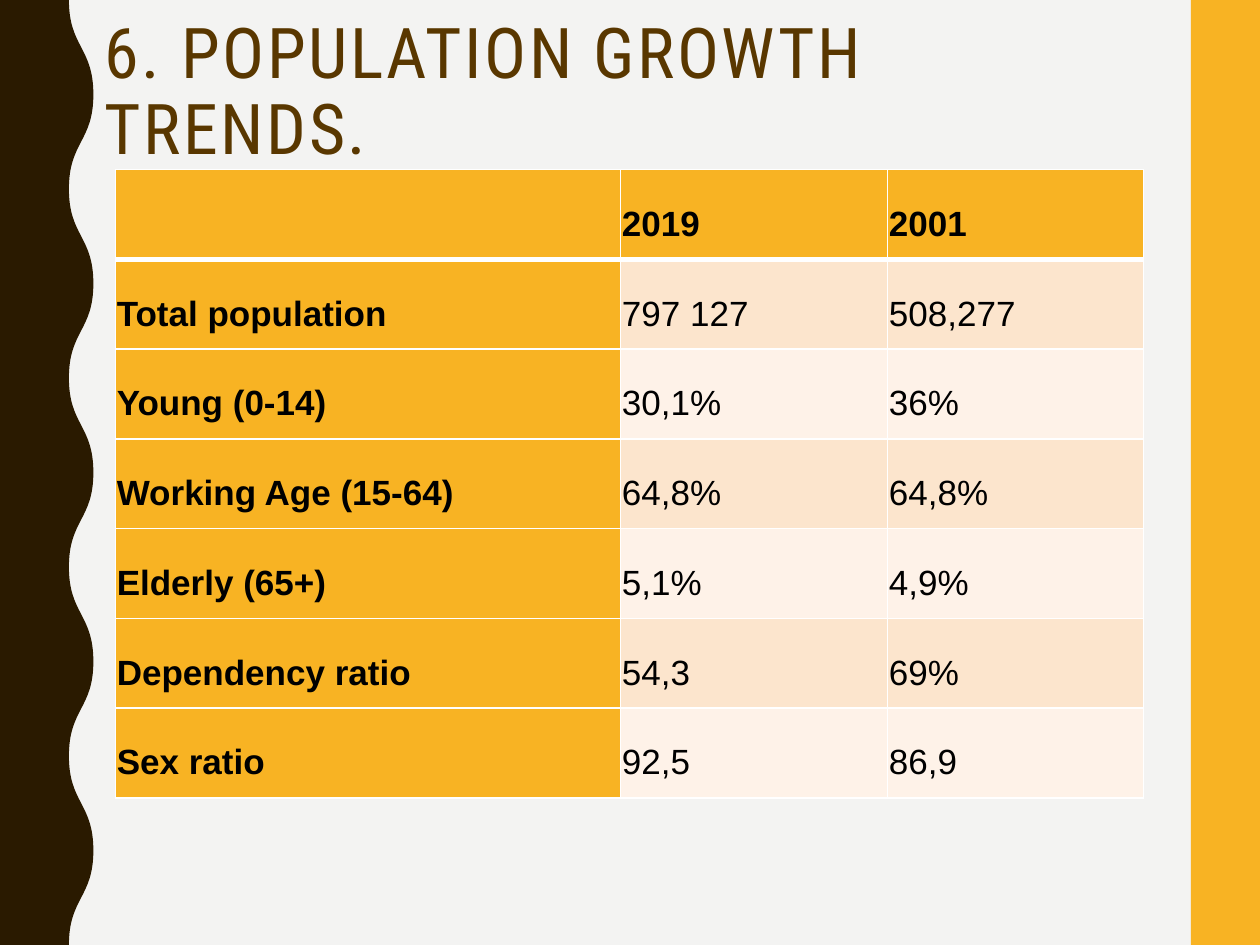
from lxml import etree
from pptx import Presentation
from pptx.dml.color import RGBColor
from pptx.enum.shapes import MSO_SHAPE
from pptx.enum.text import MSO_ANCHOR, MSO_AUTO_SIZE, PP_ALIGN
from pptx.oxml.ns import qn
from pptx.util import Pt

RECT = MSO_SHAPE.RECTANGLE
TOP, MIDDLE = MSO_ANCHOR.TOP, MSO_ANCHOR.MIDDLE
LEFT, JUSTIFY = PP_ALIGN.LEFT, PP_ALIGN.JUSTIFY
NO_FIT = MSO_AUTO_SIZE.NONE

PAPER = RGBColor(0xF3, 0xF3, 0xF2)
GOLD = RGBColor(0xF8, 0xB3, 0x23)
DARK = RGBColor(0x2A, 0x1A, 0x00)
BROWN = RGBColor(0x59, 0x37, 0x00)
PEACH = RGBColor(0xFC, 0xE5, 0xCD)
CREAM = RGBColor(0xFE, 0xF2, 0xE8)
BLACK = RGBColor(0, 0, 0)
WHITE = RGBColor(0xFF, 0xFF, 0xFF)

WIDE, HIGH = 720, 540
ROWS = [
    ("", "2019", "2001"),
    ("Total population", "797 127", "508,277"),
    ("Young (0-14)", "30,1%", "36%"),
    ("Working Age (15-64)", "64,8%", "64,8%"),
    ("Elderly (65+)", "5,1%", "4,9%"),
    ("Dependency ratio", "54,3", "69%"),
    ("Sex ratio", "92,5", "86,9"),
]


def assign(item, values):
    for name, value in values.items():
        setattr(item, name, value)


class Deck:
    title_font = {"name": "Roboto Condensed", "size": Pt(40), "bold": False}
    cell_font = {"name": "Arial", "size": Pt(20)}
    cell_box = {"vertical_anchor": MIDDLE, "margin_left": Pt(0.75), "margin_right": Pt(0.75),
                "margin_top": Pt(0.75), "margin_bottom": Pt(0.75)}

    def __init__(self):
        self.file = Presentation()
        assign(self.file, {"slide_width": Pt(WIDE), "slide_height": Pt(HIGH)})
        self.slide = self.file.slides.add_slide(self.file.slide_layouts[5])
        self.paint(self.slide.background, PAPER)

    def paint(self, item, color):
        item.fill.solid()
        item.fill.fore_color.rgb = color

    def plain(self, shape, color):
        self.paint(shape, color)
        shape.line.fill.background()
        shape.shadow.inherit = False

    def bar(self, left, top, width, height, color):
        shape = self.slide.shapes.add_shape(RECT, Pt(left), Pt(top), Pt(width), Pt(height))
        self.plain(shape, color)

    def wave(self, near, far, count, color):
        """Fill the left edge up to a border of smooth half waves."""
        half = HIGH / count
        ends = [(Pt(far if turn % 2 else near), Pt(half * turn)) for turn in range(count + 1)]
        path = self.slide.shapes.build_freeform(*ends[0])
        path.add_line_segments(ends[1:] + [(0, Pt(HIGH)), (0, 0)], close=True)
        shape = path.convert_to_shape()
        # Bend the lines along the border into curves
        lines = list(shape._element.iter(qn("a:lnTo")))
        for line, (x1, y1), (x2, y2) in zip(lines, ends, ends[1:]):
            line.tag = qn("a:cubicBezTo")
            middle = (y1 + y2) // 2
            for spot, x in enumerate((x1, x2)):
                point = etree.Element(qn("a:pt"), x=str(int(x)), y=str(middle))
                line.insert(spot, point)
        self.plain(shape, color)

    def title(self, text, left, top, width, height):
        shape = self.slide.shapes.title
        assign(shape, {"left": Pt(left), "top": Pt(top),
                       "width": Pt(width), "height": Pt(height)})
        frame = shape.text_frame
        frame.text = text
        assign(frame, {"word_wrap": True, "auto_size": NO_FIT, "vertical_anchor": TOP})
        para = frame.paragraphs[0]
        assign(para, {"alignment": LEFT, "line_spacing": 0.9, "space_before": Pt(0)})
        font = para.runs[0].font
        assign(font, self.title_font)
        font.color.rgb = BROWN
        para.runs[0]._r.get_or_add_rPr().set("spc", "150")

    def border(self, cell, side, width):
        line = etree.SubElement(cell._tc.get_or_add_tcPr(), qn("a:ln" + side), w=str(Pt(width)))
        fill = etree.SubElement(line, qn("a:solidFill"))
        etree.SubElement(fill, qn("a:srgbClr"), val=str(WHITE))

    def cell(self, cell, text, row, col):
        head = row == 0 or col == 0
        assign(cell, self.cell_box)
        # Borders come before the fill in the cell properties
        for side in "LRTB":
            thick = (row, side) in ((0, "B"), (1, "T"))
            self.border(cell, side, 3 if thick else 1)
        self.paint(cell, GOLD if head else PEACH if row % 2 else CREAM)
        cell.text = text
        para = cell.text_frame.paragraphs[0]
        assign(para, {"alignment": JUSTIFY, "line_spacing": 1.5})
        for run in para.runs:
            assign(run.font, {**self.cell_font, "bold": head})
            run.font.color.rgb = BLACK

    def table(self, rows, left, top, widths, height):
        frame = self.slide.shapes.add_table(len(rows), len(widths), Pt(left), Pt(top),
                                            Pt(sum(widths)), Pt(height * len(rows)))
        grid = frame.table
        for col, width in enumerate(widths):
            grid.columns[col].width = Pt(width)
        for row, texts in enumerate(rows):
            grid.rows[row].height = Pt(height)
            for col, text in enumerate(texts):
                self.cell(grid.cell(row, col), text, row, col)


def main():
    deck = Deck()
    # Side decoration
    deck.bar(680.6, 0, 39.4, HIGH, GOLD)
    deck.wave(39.4, 53.4, 10, DARK)
    # Heading and figures
    deck.title("6. POPULATION GROWTH TRENDS.", 52.7, 6.7, 601, 70.5)
    deck.table(ROWS, 66, 96.8, (288.7, 152.6, 146.2), 51.33)
    deck.file.save("out.pptx")


if __name__ == "__main__":
    main()
